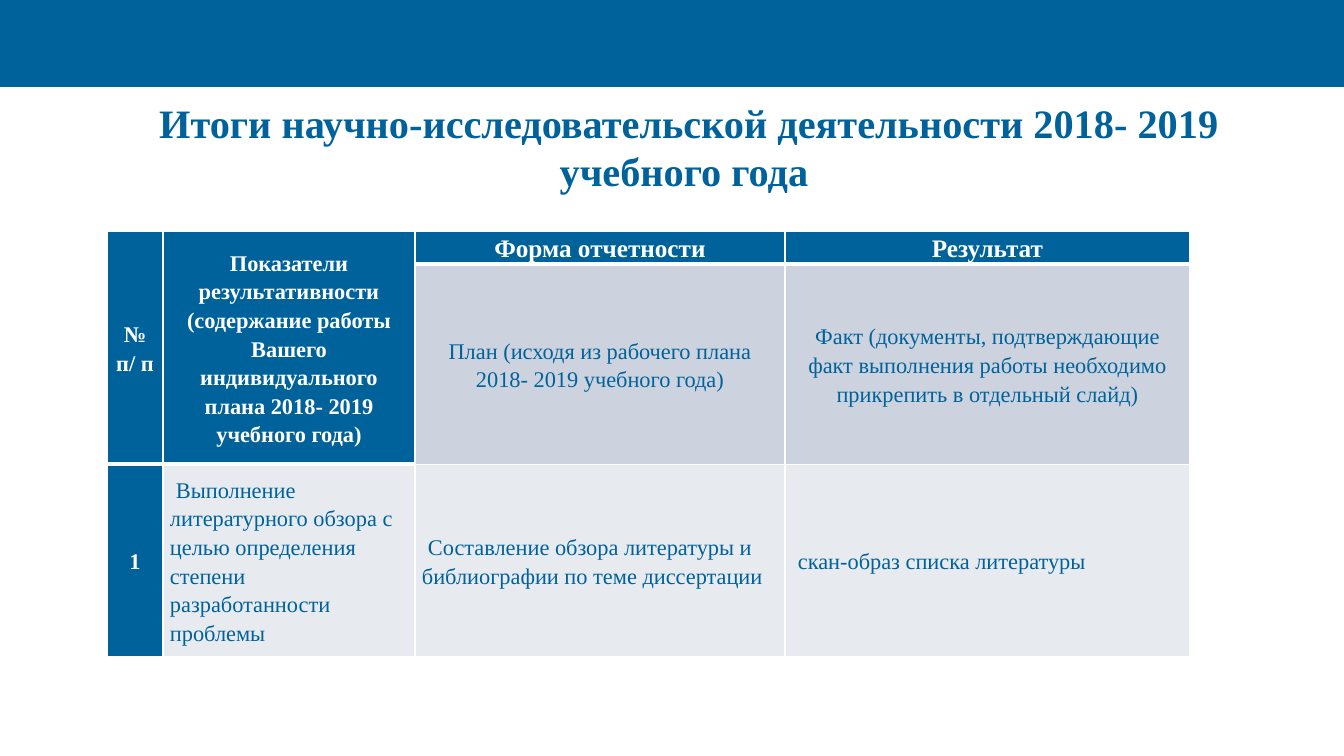
import pptx
import pptx.dml.color
import pptx.enum.shapes
import pptx.enum.text
import pptx.oxml.ns
import pptx.util
import lxml.etree

RGBColor = pptx.dml.color.RGBColor
BLUE = RGBColor(0x00, 0x62, 0x9B)
WHITE = RGBColor(0xFF, 0xFF, 0xFF)
GREY = RGBColor(0xCC, 0xD3, 0xDE)
PALE = RGBColor(0xE7, 0xEA, 0xEF)
CENTER = pptx.enum.text.PP_ALIGN.CENTER
LEFT = pptx.enum.text.PP_ALIGN.LEFT
MIDDLE = pptx.enum.text.MSO_ANCHOR.MIDDLE
TOP = pptx.enum.text.MSO_ANCHOR.TOP
FONT = "Times New Roman"

COLUMN_WIDTHS = [56, 252, 370, 405]
ROW_HEIGHTS = [33, 199, 192]
ROWS = [
    ["№ п/ п",
     "Показатели результативности\n"
     "(содержание работы Вашего индивидуального плана 2018- 2019 учебного года)",
     "Форма отчетности",
     "Результат"],
    ["", "",
     "План (исходя из рабочего плана 2018- 2019 учебного года)",
     "Факт (документы, подтверждающие факт выполнения работы необходимо "
     "прикрепить в отдельный слайд)"],
    ["1",
     "Выполнение литературного обзора с целью определения степени "
     "разработанности проблемы",
     "Составление обзора литературы и библиографии по теме диссертации",
     "скан-образ списка литературы"],
]


def px(length):
    return pptx.util.Emu(round(length * 914400 / 100.8))


def style_paragraph(paragraph, size, color, bold, alignment):
    paragraph.alignment = alignment
    paragraph.font.name = FONT
    paragraph.font.size = pptx.util.Pt(size)
    paragraph.font.bold = bold
    paragraph.font.color.rgb = color


def set_borders(cell, bottom_width):
    properties = cell._tc.get_or_add_tcPr()
    widths = {"a:lnL": 1, "a:lnR": 1, "a:lnT": 1, "a:lnB": bottom_width}
    for index, (tag, width) in enumerate(widths.items()):
        line = lxml.etree.Element(pptx.oxml.ns.qn(tag), w=str(pptx.util.Pt(width)))
        fill = lxml.etree.SubElement(line, pptx.oxml.ns.qn("a:solidFill"))
        lxml.etree.SubElement(fill, pptx.oxml.ns.qn("a:srgbClr"), val=str(WHITE))
        properties.insert(index, line)


def add_band(slide, left, top, width, height):
    band = slide.shapes.add_shape(
        pptx.enum.shapes.MSO_SHAPE.RECTANGLE, px(left), px(top), px(width), px(height))
    band.shadow.inherit = False
    band.fill.solid()
    band.fill.fore_color.rgb = BLUE
    band.line.fill.background()


def place_title(slide, left, top, width, height):
    title = slide.shapes.title
    title.left, title.top = px(left), px(top)
    title.width, title.height = px(width), px(height)
    frame = title.text_frame
    frame.text = "Итоги научно-исследовательской деятельности 2018- 2019 учебного года "
    frame.word_wrap = True
    frame.auto_size = pptx.enum.text.MSO_AUTO_SIZE.NONE
    frame.vertical_anchor = MIDDLE
    style_paragraph(frame.paragraphs[0], 28.8, BLUE, True, CENTER)


def fill_cell(cell, text, row, column):
    heading = row == 0 or column == 0
    column_title = row == 0 and column >= 2
    result = row == 2 and column > 0
    cell.text = text
    cell.margin_left = cell.margin_right = px(7)
    cell.margin_top = cell.margin_bottom = 0
    cell.vertical_anchor = TOP if column_title else MIDDLE
    cell.fill.solid()
    cell.fill.fore_color.rgb = BLUE if heading else PALE if result else GREY
    set_borders(cell, 3 if row == 0 or (row == 1 and column < 2) else 1)
    for paragraph in cell.text_frame.paragraphs:
        paragraph.line_spacing = 1.15
        if result:
            paragraph._p.get_or_add_pPr().set("indent", str(px(6)))
        style_paragraph(paragraph, 18 if column_title else 16,
                        WHITE if heading else BLUE, heading,
                        LEFT if result else CENTER)


def add_results_table(slide, left, top):
    table = slide.shapes.add_table(
        len(ROW_HEIGHTS), len(COLUMN_WIDTHS), px(left), px(top),
        px(sum(COLUMN_WIDTHS)), px(sum(ROW_HEIGHTS))).table
    for column, width in zip(table.columns, COLUMN_WIDTHS):
        column.width = px(width)
    for row, height in zip(table.rows, ROW_HEIGHTS):
        row.height = px(height)
    for row, texts in enumerate(ROWS):
        for column, text in enumerate(texts):
            fill_cell(table.cell(row, column), text, row, column)
    for column in range(2):
        table.cell(0, column).merge(table.cell(1, column))


def main():
    presentation = pptx.Presentation()
    presentation.slide_width = px(1344)
    presentation.slide_height = px(756)
    slide = presentation.slides.add_slide(presentation.slide_layouts[5])
    add_band(slide, 0, 0, 1344, 87)
    place_title(slide, 84, 101, 1210, 91)
    add_results_table(slide, 107, 231)
    presentation.save("out.pptx")


if __name__ == "__main__":
    main()
